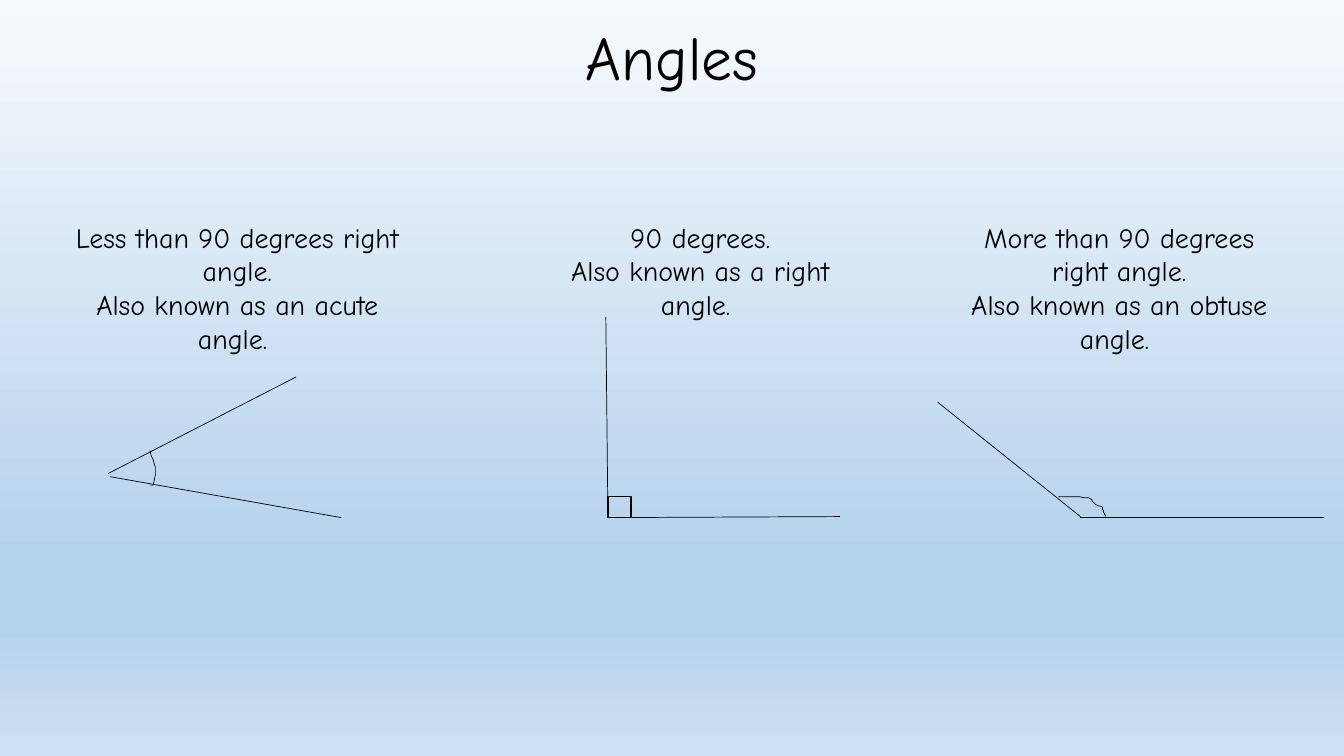
from pptx import Presentation
from pptx.dml.color import RGBColor
from pptx.enum.shapes import MSO_CONNECTOR, MSO_SHAPE
from pptx.enum.text import MSO_ANCHOR, PP_ALIGN
from pptx.oxml.ns import qn
from pptx.util import Pt
from lxml import etree

PX = 9525
STRAIGHT = MSO_CONNECTOR.STRAIGHT
RECT = MSO_SHAPE.RECTANGLE
TOP, MIDDLE = MSO_ANCHOR.TOP, MSO_ANCHOR.MIDDLE
CENTER = PP_ALIGN.CENTER
STEPS = 8


def px(*lengths):
    return [n * PX for n in lengths]


def rgb(value):
    return RGBColor.from_string(value)


def bezier(p0, p1, p2, p3):
    points = []
    for i in range(1, STEPS + 1):
        t = i / STEPS
        u = 1 - t
        points.append(tuple(u**3 * a + 3 * u * u * t * b + 3 * u * t * t * c + t**3 * d
                            for a, b, c, d in zip(p0, p1, p2, p3)))
    return points


class AngleSlide:
    """Draws text and angle figures in one style on one slide."""

    font = "Comic Neue"
    ink = "000000"

    def __init__(self, prs):
        self.s = prs.slides.add_slide(prs.slide_layouts[6])

    def background(self, stops):
        fill = self.s.background.fill
        fill.gradient()
        fill.gradient_angle = 270
        gs_lst = next(self.s.element.iter(qn("a:gsLst")))
        for gs in list(gs_lst):
            gs_lst.remove(gs)
        for percent, color in stops:
            gs = etree.SubElement(gs_lst, qn("a:gs"), pos=str(percent * 1000))
            etree.SubElement(gs, qn("a:srgbClr"), val=color)

    def text(self, x, y, w, h, lines, size, anchor=TOP, spacing=1.0):
        tf = self.s.shapes.add_textbox(*px(x, y, w, h)).text_frame
        tf.word_wrap = True
        tf.vertical_anchor = anchor
        tf.text = "\n".join(lines)
        for p in tf.paragraphs:
            p.alignment = CENTER
            p.line_spacing = spacing
            p.font.name = self.font
            p.font.size = Pt(size)
            p.font.color.rgb = rgb(self.ink)

    def outline(self, sp, width):
        sp.line.color.rgb = rgb(self.ink)
        sp.line.width = Pt(width)

    def line(self, x1, y1, x2, y2):
        sp = self.s.shapes.add_connector(STRAIGHT, *px(x1, y1, x2, y2))
        self.outline(sp, 0.5)
        etree.SubElement(sp._element.spPr, qn("a:effectLst"))

    def arc(self, start, curves):
        points, last = [], start
        for c1, c2, end in curves:
            points += bezier(last, c1, c2, end)
            last = end
        builder = self.s.shapes.build_freeform(*start, scale=PX)
        builder.add_line_segments(points, close=False)
        self.hollow(builder.convert_to_shape(), 0.5)

    def square(self, x, y, w, h):
        self.hollow(self.s.shapes.add_shape(RECT, *px(x, y, w, h)), 1)

    def hollow(self, sp, width):
        sp.shadow.inherit = False
        sp.fill.background()
        self.outline(sp, width)


def main():
    prs = Presentation()
    prs.slide_width, prs.slide_height = px(1280, 720)
    slide = AngleSlide(prs)
    slide.background([(0, "F7FAFD"), (74, "B5D2EC"), (83, "B5D2EC"), (100, "CEE1F2")])
    slide.text(88, -12, 1104, 139, ["Angles"], 44, MIDDLE, 0.9)

    captions = [
        (57, 139, "Less than 90 degrees right angle.", "an acute"),
        (498, 107, "90 degrees.", "a right"),
        (897, 139, "More than 90 degrees right angle.", "an obtuse"),
    ]
    for x, h, size, kind in captions:
        slide.text(x, 205, 338, h, [size, f"Also known as {kind} angle. "], 20)

    acute = [(282, 359, 103, 451), (105, 454, 325, 493)]
    right = [(577, 302, 579, 493), (800, 492, 580, 493)]
    obtuse = [(1261, 493, 1029, 493), (1029, 492, 893, 383)]
    for ends in acute + right + obtuse:
        slide.line(*ends)

    slide.arc((143, 429), [
        ((147, 444), (150, 446), (146, 462)),
        ((146, 462), (144, 462), (143, 462)),
    ])
    slide.arc((1008, 473), [
        ((1017, 473), (1026, 473), (1035, 474)),
        ((1040, 475), (1039, 476), (1042, 479)),
        ((1045, 482), (1045, 481), (1050, 483)),
        ((1050, 484), (1051, 486), (1051, 487)),
        ((1052, 489), (1053, 492), (1053, 492)),
    ])
    slide.square(579, 473, 22, 20)
    prs.save("out.pptx")


if __name__ == "__main__":
    main()
